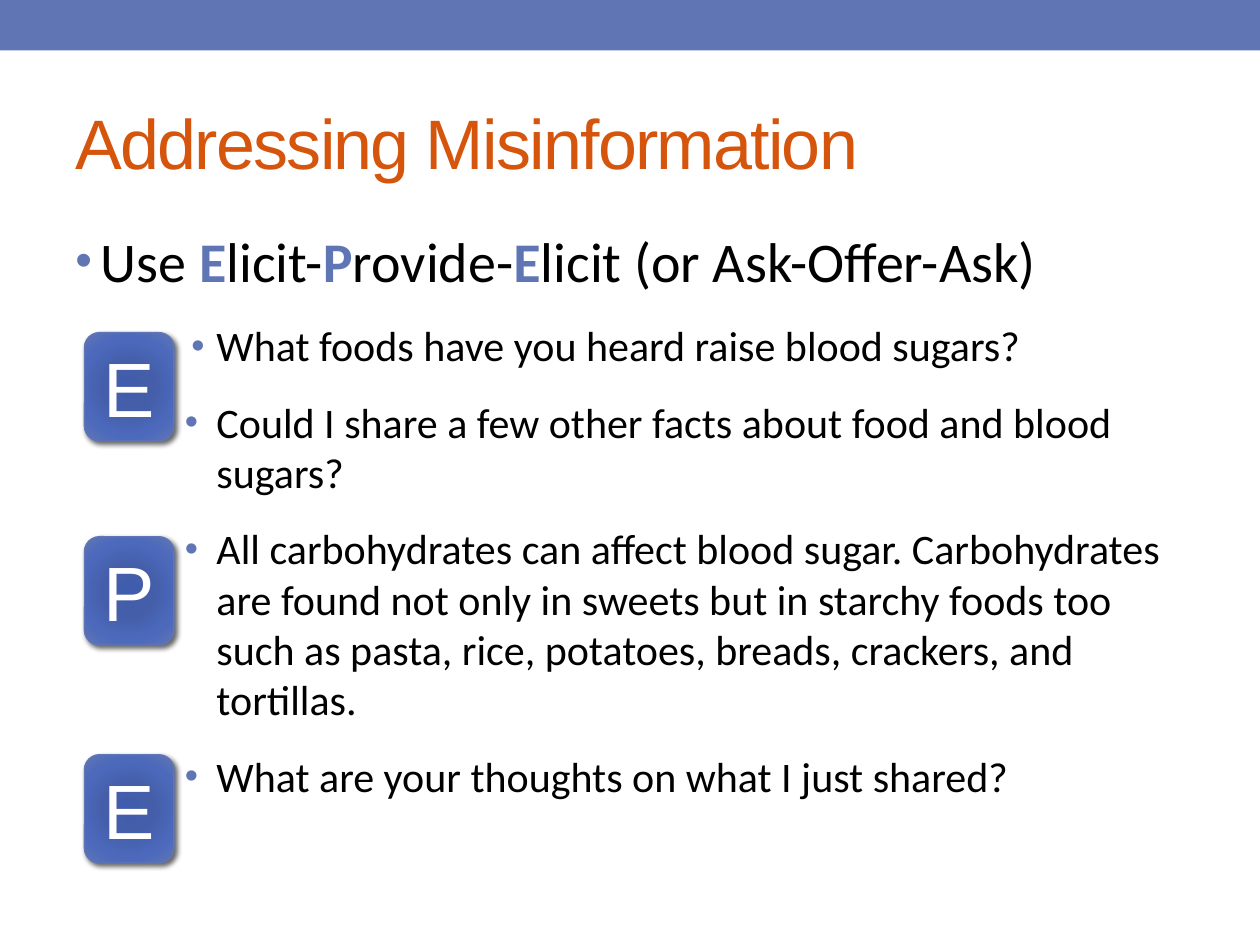
from dataclasses import dataclass

from lxml import etree
from pptx import Presentation
from pptx.dml.color import RGBColor
from pptx.enum.shapes import MSO_SHAPE as SHAPE
from pptx.enum.text import MSO_ANCHOR as ANCHOR, PP_ALIGN as ALIGN
from pptx.oxml import parse_xml
from pptx.oxml.ns import nsdecls, qn
from pptx.util import Inches, Pt


@dataclass(frozen=True)
class Theme:
    accent: str = "6076B4"
    title: str = "D6550D"
    text: str = "000000"
    light: str = "FFFFFF"
    gradient: tuple = ((0, "405CAC"), (34, "445EA9"), (70, "4C69BC"), (100, "6076B4"))
    heading_font: str = "Arial"
    body_font: str = "Calibri"
    title_size: int = 40
    lead_size: int = 32
    item_size: int = 24
    badge_size: int = 44


THEME = Theme()

LEAD = [("Use ", False), ("E", True), ("licit-", False), ("P", True),
        ("rovide-", False), ("E", True), ("licit (or Ask-Offer-Ask)", False)]
ITEMS = [
    ("What foods have you heard raise blood sugars?", 0.2),
    ("Could I share a few other facts about food and blood sugars?", 0.25),
    ("All carbohydrates can affect blood sugar. Carbohydrates are found not only "
     "in sweets but in starchy foods too such as pasta, rice, potatoes, breads, "
     "crackers, and tortillas.", 0.25),
    ("What are your thoughts on what I just shared?", 0.25),
]
BADGES = [("E", 2.64), ("P", 4.26), ("E", 5.99)]


def rgb(color):
    return RGBColor.from_string(color)


def place(shape, box):
    shape.left, shape.top, shape.width, shape.height = map(Inches, box)


def add_run(p, text, size, font, color, bold=False):
    r = p.add_run()
    r.text = text
    r.font.size, r.font.name, r.font.bold = Pt(size), font, bold
    r.font.color.rgb = rgb(color)
    return r


def format_bullet(p, margin, hang, size, percent):
    p.space_before, p.space_after = Pt(size * 0.2), Pt(10)
    pPr = p._p.get_or_add_pPr()
    pPr.set("marL", str(Inches(margin)))
    pPr.set("indent", str(-Inches(hang)))
    color = etree.SubElement(pPr, qn("a:buClr"))
    etree.SubElement(color, qn("a:srgbClr"), val=THEME.accent)
    etree.SubElement(pPr, qn("a:buSzPct"), val=str(percent * 1000))
    etree.SubElement(pPr, qn("a:buFont"), typeface="Arial")
    etree.SubElement(pPr, qn("a:buChar"), char="•")


def add_band(s, box):
    band = s.shapes.add_shape(SHAPE.RECTANGLE, *map(Inches, box))
    band.shadow.inherit = False
    band.fill.solid()
    band.fill.fore_color.rgb = rgb(THEME.accent)
    band.line.fill.background()


def add_title(s, box):
    title = s.shapes.title
    place(title, box)
    tf = title.text_frame
    tf.vertical_anchor = ANCHOR.MIDDLE
    p = tf.paragraphs[0]
    p.alignment = ALIGN.LEFT
    r = add_run(p, "Addressing Misinformation", THEME.title_size,
                THEME.heading_font, THEME.title)
    r.font._element.set("spc", "-100")


def add_body(s, box):
    tf = s.shapes.add_textbox(*map(Inches, box)).text_frame
    tf.word_wrap = True
    p = tf.paragraphs[0]
    format_bullet(p, 0.2, 0.2, THEME.lead_size, 85)
    for text, strong in LEAD:
        add_run(p, text, THEME.lead_size, THEME.body_font,
                THEME.accent if strong else THEME.text, strong)
    for text, hang in ITEMS:
        p = tf.add_paragraph()
        p.level = 1
        format_bullet(p, 1.12, hang, THEME.item_size, 90)
        add_run(p, text, THEME.item_size, THEME.body_font, THEME.text)


def style_badge(badge):
    badge.fill.background()
    badge.line.color.rgb = rgb(THEME.accent)
    badge.line.width = Pt(0.75)
    badge.shadow.inherit = False
    spPr = badge._element.spPr
    stops = "".join(f'<a:gs pos="{pos * 1000}"><a:srgbClr val="{color}"/></a:gs>'
                    for pos, color in THEME.gradient)
    spPr.replace(spPr.find(qn("a:noFill")), parse_xml(
        f'<a:gradFill {nsdecls("a")} rotWithShape="1"><a:gsLst>{stops}</a:gsLst>'
        '<a:path path="circle"><a:fillToRect l="100000" t="100000" r="100000" '
        'b="100000"/></a:path></a:gradFill>'))
    spPr.find(qn("a:effectLst")).append(parse_xml(
        f'<a:outerShdw {nsdecls("a")} blurRad="{Pt(3)}" dist="{Pt(2)}" dir="2700000" '
        'rotWithShape="0"><a:srgbClr val="000000"><a:alpha val="60000"/></a:srgbClr>'
        '</a:outerShdw>'))


def add_badge(s, letter, box):
    badge = s.shapes.add_shape(SHAPE.ROUNDED_RECTANGLE, *map(Inches, box))
    style_badge(badge)
    tf = badge.text_frame
    tf.vertical_anchor = ANCHOR.MIDDLE
    p = tf.paragraphs[0]
    p.alignment = ALIGN.CENTER
    add_run(p, letter, THEME.badge_size, THEME.heading_font, THEME.light)


def main():
    prs = Presentation()
    prs.slide_width, prs.slide_height = Inches(10), Inches(7.5)
    s = prs.slides.add_slide(prs.slide_layouts[5])
    add_band(s, (0, 0, 10, 0.4))
    add_title(s, (0.5, 0.58, 9, 1.08))
    add_body(s, (0.5, 1.75, 9, 5.33))
    for letter, top in BADGES:
        add_badge(s, letter, (0.67, top, 0.71, 0.86))
    prs.save("out.pptx")


if __name__ == "__main__":
    main()
